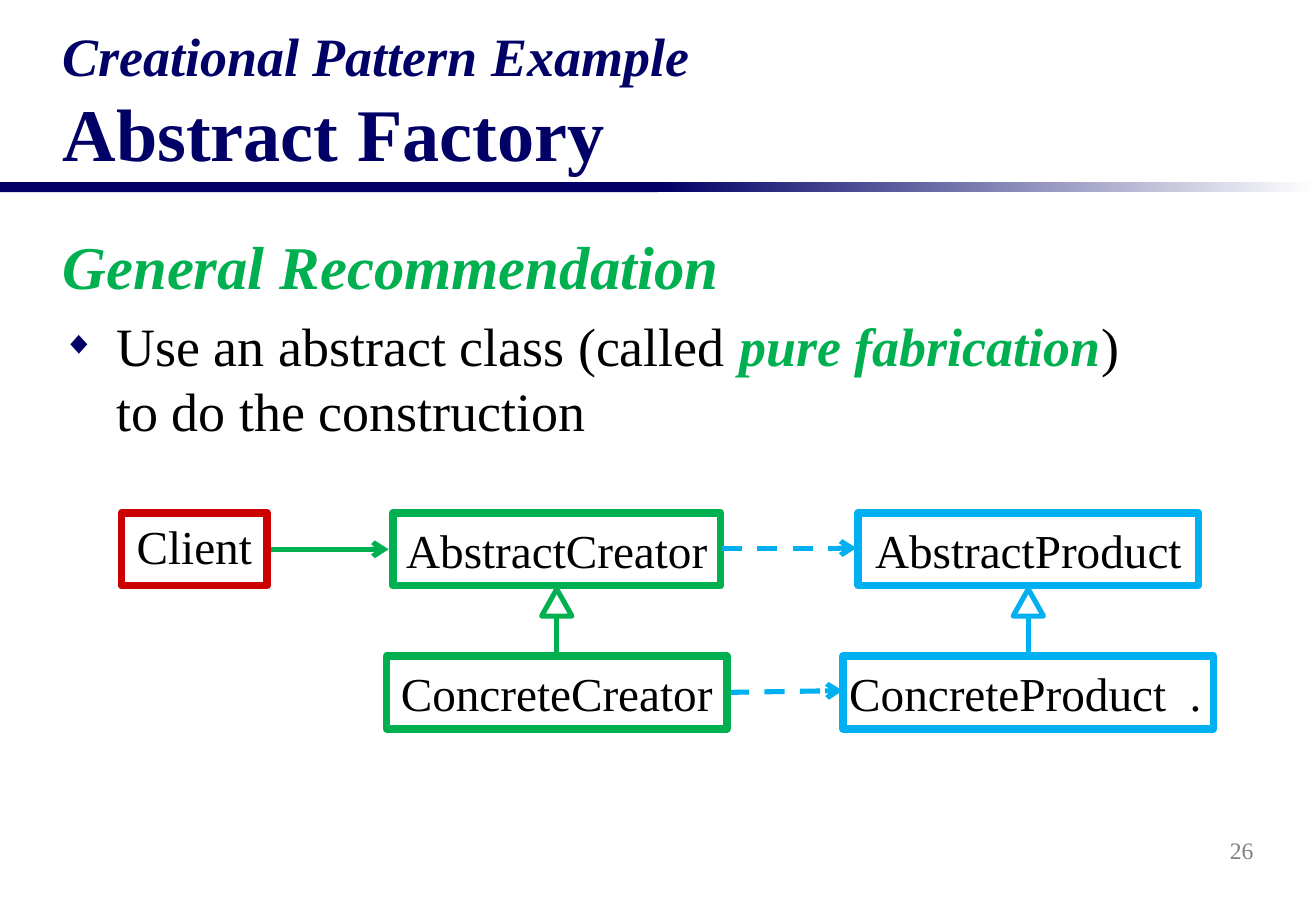
from lxml import etree
from pptx import Presentation
from pptx.dml.color import RGBColor
from pptx.enum import dml, shapes, text
from pptx.oxml import ns
from pptx.util import Pt

NAVY = RGBColor(0x00, 0x00, 0x66)
GREEN = RGBColor(0x00, 0xB0, 0x50)
BLUE = RGBColor(0x00, 0xB0, 0xF0)
RED = RGBColor(0xCC, 0x00, 0x00)
BLACK = RGBColor(0x00, 0x00, 0x00)
GRAY = RGBColor(0x80, 0x80, 0x80)
WHITE = RGBColor(0xFF, 0xFF, 0xFF)
FONT = "Times New Roman"
LEFT, CENTER, RIGHT = text.PP_ALIGN.LEFT, text.PP_ALIGN.CENTER, text.PP_ALIGN.RIGHT


def child(parent, tag, **attrs):
    """Append a DrawingML element to a parent and return it."""
    return etree.SubElement(parent, ns.qn(tag), **attrs)


def add_run(p, words, size, color=BLACK, bold=False, italic=False):
    """Add one formatted run to a paragraph."""
    r = p.add_run()
    r.text = words
    f = r.font
    f.name, f.size, f.bold, f.italic = FONT, Pt(size), bold, italic
    f.color.rgb = color


def add_textbox(s, x, y, w, h, anchor, wrap=True):
    """Add an empty text box and return its text frame."""
    tf = s.shapes.add_textbox(Pt(x), Pt(y), Pt(w), Pt(h)).text_frame
    tf.word_wrap = wrap
    tf.vertical_anchor = anchor
    return tf


def add_outline(s, kind, x, y, w, h, color, width):
    """Add an unfilled preset shape with a coloured outline."""
    sp = s.shapes.add_shape(kind, Pt(x), Pt(y), Pt(w), Pt(h))
    sp.shadow.inherit = False
    sp.fill.background()
    sp.line.color.rgb = color
    sp.line.width = Pt(width)
    return sp


def add_class(s, x, y, w, h, name, color, align=CENTER, spacing=1.0):
    """Add a class box holding its name."""
    sp = add_outline(s, shapes.MSO_SHAPE.RECTANGLE, x, y, w, h, color, 4.5)
    tf = sp.text_frame
    tf.word_wrap = False
    tf.vertical_anchor = text.MSO_ANCHOR.MIDDLE
    p = tf.paragraphs[0]
    p.alignment = align
    p.line_spacing = spacing
    add_run(p, name, 28)


def add_line(s, x1, y1, x2, y2, color, dashed=False, arrow=False):
    """Add a straight line, optionally dashed or ending in an open arrowhead."""
    cn = s.shapes.add_connector(
        shapes.MSO_CONNECTOR.STRAIGHT, Pt(x1), Pt(y1), Pt(x2), Pt(y2))
    cn.line.color.rgb = color
    cn.line.width = Pt(3)
    if dashed:
        cn.line.dash_style = dml.MSO_LINE.DASH
    if arrow:
        child(cn.line._get_or_add_ln(), "a:tailEnd", type="arrow")
    child(cn._element.spPr, "a:effectLst")


def add_inheritance(s, x, y, h, color):
    """Add a generalisation arrow whose tip is at x, y."""
    head = 16
    add_line(s, x, y + h, x, y + head, color)
    add_outline(s, shapes.MSO_SHAPE.ISOSCELES_TRIANGLE, x - 9, y, 18, head, color, 3)


def add_rule(s, x, y, w, h):
    """Draw the title rule, solid on the left half and fading on the right."""
    half = w / 2
    for i in range(2):
        sp = s.shapes.add_shape(
            shapes.MSO_SHAPE.RECTANGLE, Pt(x + i * half), Pt(y), Pt(half), Pt(h))
        sp.shadow.inherit = False
        sp.line.fill.background()
        if i == 0:
            sp.fill.solid()
            sp.fill.fore_color.rgb = NAVY
        else:
            sp.fill.gradient()
            sp.fill.gradient_angle = 0
            for stop, color, pos in zip(sp.fill.gradient_stops, (NAVY, WHITE), (0, 1)):
                stop.color.rgb = color
                stop.position = pos


def add_title(s, x, y, w, h):
    """Write the two-line title at the bottom of its box."""
    p = add_textbox(s, x, y, w, h, text.MSO_ANCHOR.BOTTOM).paragraphs[0]
    add_run(p, "Creational Pattern Example", 32, NAVY, True, True)
    p.add_line_break()
    add_run(p, "Abstract Factory", 44, NAVY, True)


def add_body(s, x, y, w, h):
    """Write the green heading and its bulleted recommendation."""
    tf = add_textbox(s, x, y, w, h, text.MSO_ANCHOR.TOP)
    p = tf.paragraphs[0]
    p.space_before = Pt(7.2)
    add_run(p, "General Recommendation", 36, GREEN, True, True)
    p = tf.add_paragraph()
    p.space_before = Pt(6.4)
    add_run(p, "Use an abstract class (called ", 32)
    add_run(p, "pure fabrication", 32, GREEN, True, True)
    add_run(p, ") to do the construction", 32)
    pPr = p._p.get_or_add_pPr()
    indent = Pt(32)
    pPr.set("marL", str(indent))
    pPr.set("indent", str(-indent))
    child(child(pPr, "a:buClr"), "a:srgbClr", val=str(NAVY))
    child(pPr, "a:buSzPct", val="60000")
    child(pPr, "a:buFont", typeface=FONT)
    child(pPr, "a:buChar", char="◆")


def add_diagram(s, x, y, w, h):
    """Draw the class diagram: client, creators and products in two rows."""
    box_h = 43.2
    low = y + h - box_h
    mid, low_mid = y + box_h / 2, low + box_h / 2
    creator, product = x + 258, x + 537.5
    add_inheritance(s, product, y + box_h + 2, low - y - box_h - 2, BLUE)
    add_inheritance(s, creator, y + box_h + 2, low - y - box_h - 2, GREEN)
    add_line(s, x + 360, low_mid, x + 427.5, low_mid - 1, BLUE, True, True)
    add_line(s, x + 86.4, mid, x + 158.4, mid, GREEN, arrow=True)
    add_class(s, x, y, 86.4, box_h, "Client", RED, spacing=0.9)
    for name, cx, top, bw, color, align in (
        ("AbstractProduct", product, y, 201.6, BLUE, CENTER),
        ("ConcreteProduct  .", product, low, 219.6, BLUE, RIGHT),
        ("AbstractCreator", creator, y, 194.4, GREEN, CENTER),
        ("ConcreteCreator", creator, low, 201.6, GREEN, CENTER),
    ):
        add_class(s, cx - bw / 2, top, bw, box_h, name, color, align)
    add_line(s, x + 355.7, mid - 0.7, x + 435.6, mid - 0.7, BLUE, True, True)


def add_number(s, x, y, w, h):
    """Write the slide number at the right of its box."""
    p = add_textbox(s, x, y, w, h, text.MSO_ANCHOR.MIDDLE).paragraphs[0]
    p.alignment = RIGHT
    add_run(p, "26", 14, GRAY)


def main():
    """Build the slide and save it."""
    prs = Presentation()
    prs.slide_width, prs.slide_height = Pt(780), Pt(540)
    s = prs.slides.add_slide(prs.slide_layouts[6])
    add_rule(s, 0, 108, 780, 6)
    add_number(s, 587.5, 486, 162.5, 36)
    add_title(s, 30, 24, 720, 84)
    add_body(s, 30, 132, 648, 137)
    add_diagram(s, 72, 304, 647, 128)
    prs.save("out.pptx")


if __name__ == "__main__":
    main()
